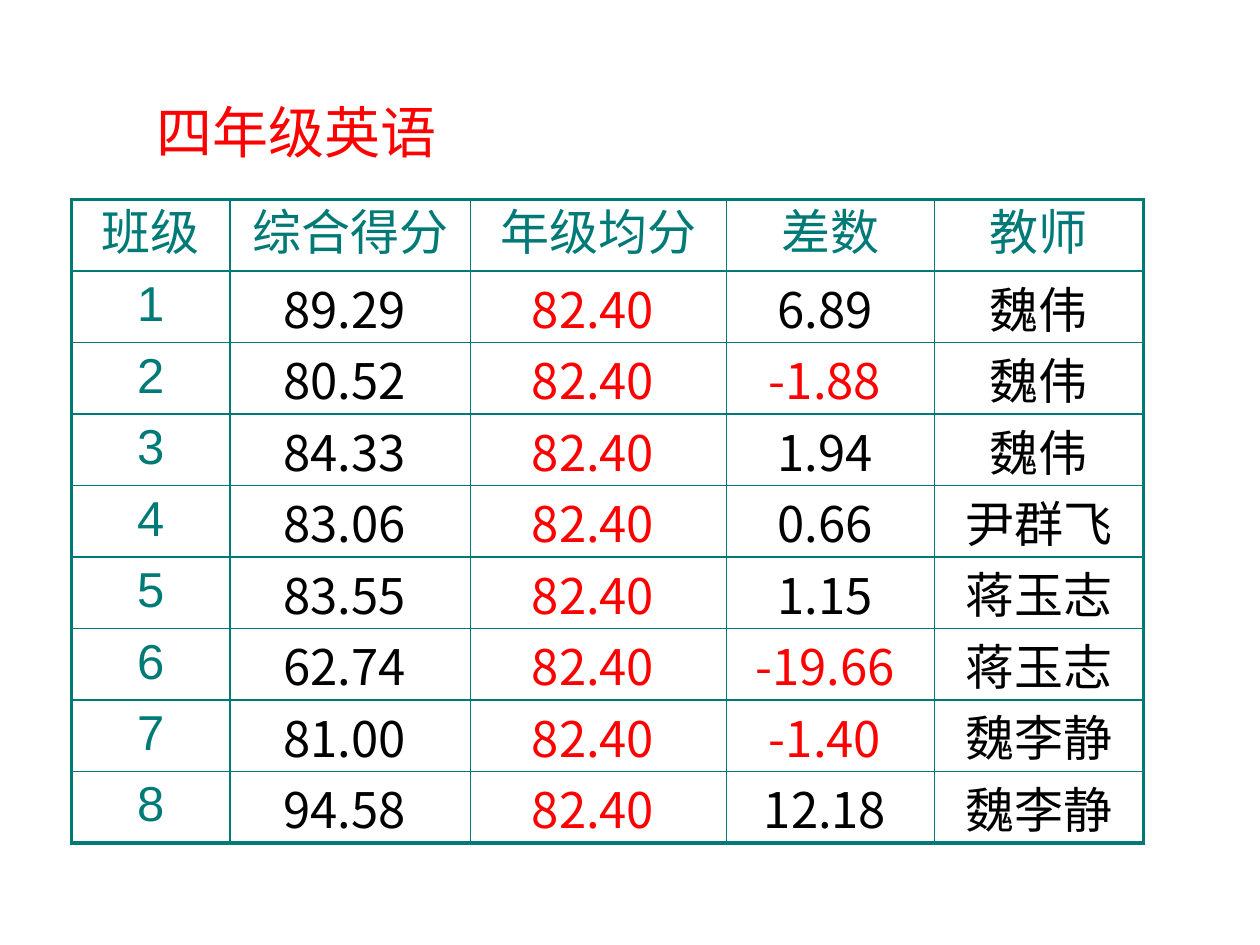
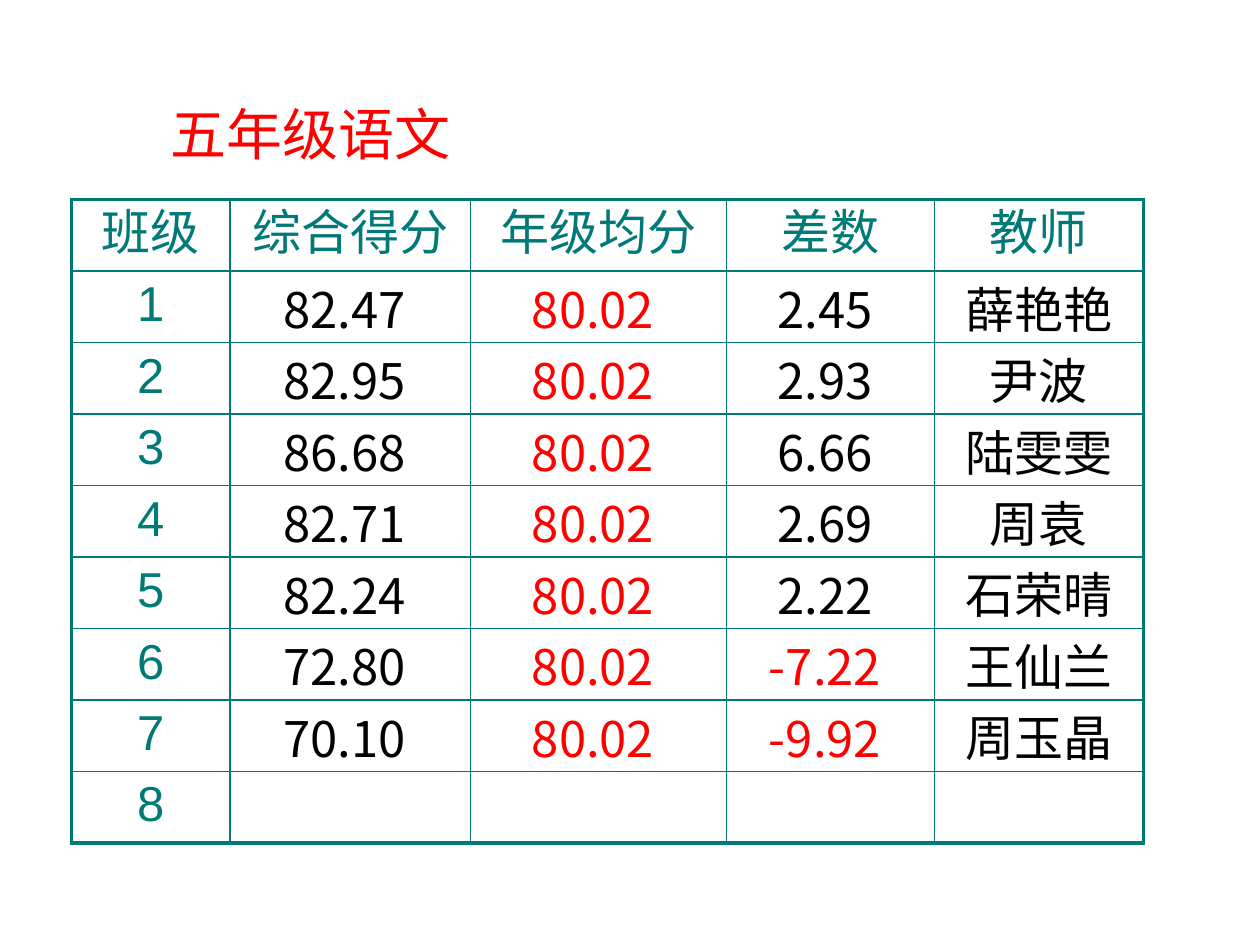
from typing import NamedTuple

from lxml import etree
from pptx import Presentation
from pptx import util as u
from pptx.dml.color import RGBColor
from pptx.enum import text
from pptx.oxml.ns import qn

PX = u.Inches(1) // 120
COLORS = {"teal": "007A77", "red": "FF0000", "black": "000000"}
LATIN, CJK = "Arial", "Noto Sans CJK SC"
HEADERS = ("班级", "综合得分", "年级均分", "差数", "教师")
COL_WIDTHS = (151, 229, 244, 198, 199)
TABLE_LEFT, TABLE_TOP, ROW_HEIGHT = 68, 190, 68
CLASS_COUNT = 8
THIN, THICK = u.Pt(1), u.Pt(2.25)
TOP, MIDDLE, BOTTOM = (text.MSO_ANCHOR.TOP, text.MSO_ANCHOR.MIDDLE,
                       text.MSO_ANCHOR.BOTTOM)


class Box(NamedTuple):
    left: int
    top: int
    width: int
    height: int


class Result(NamedTuple):
    score: str
    difference: str
    teacher: str


class Report(NamedTuple):
    title: str
    title_box: Box
    average: str
    results: tuple[Result, ...]


class Style(NamedTuple):
    font: str
    color: str
    anchor: text.MSO_ANCHOR = TOP
    inset: bool = True


LABEL = Style(LATIN, "teal")
NUMBER = Style(CJK, "black", BOTTOM, False)
RED_NUMBER = NUMBER._replace(color="red")
TEACHER = Style(CJK, "black", MIDDLE, False)

REPORTS = (
    Report("四年级英语", Box(60, 87, 445, 76), "82.40", (
        Result("89.29", "6.89", "魏伟"),
        Result("80.52", "-1.88", "魏伟"),
        Result("84.33", "1.94", "魏伟"),
        Result("83.06", "0.66", "尹群飞"),
        Result("83.55", "1.15", "蒋玉志"),
        Result("62.74", "-19.66", "蒋玉志"),
        Result("81.00", "-1.40", "魏李静"),
        Result("94.58", "12.18", "魏李静"),
    )),
    Report("五年级语文", Box(77, 89, 438, 76), "80.02", (
        Result("82.47", "2.45", "薛艳艳"),
        Result("82.95", "2.93", "尹波"),
        Result("86.68", "6.66", "陆雯雯"),
        Result("82.71", "2.69", "周袁"),
        Result("82.24", "2.22", "石荣晴"),
        Result("72.80", "-7.22", "王仙兰"),
        Result("70.10", "-9.92", "周玉晶"),
    )),
)


def write(tf, words: str, size: int, font: str, color: str) -> None:
    p = tf.paragraphs[0]
    p.alignment = text.PP_ALIGN.CENTER
    r = p.add_run()
    r.text = words
    r.font.size = u.Pt(size)
    r.font.name = font
    r.font.color.rgb = RGBColor.from_string(COLORS[color])
    latin = r._r.get_or_add_rPr().find(qn("a:latin"))
    latin.addnext(etree.Element(qn("a:ea"), typeface=font))


def set_borders(cell, row: int, col: int) -> None:
    """Thick lines on the table's outer edge, thin ones inside."""
    outer = {
        "a:lnL": col == 0,
        "a:lnR": col == len(HEADERS) - 1,
        "a:lnT": row == 0,
        "a:lnB": row == CLASS_COUNT,
    }
    tc_pr = cell._tc.get_or_add_tcPr()
    for i, (tag, is_outer) in enumerate(outer.items()):
        ln = etree.Element(qn(tag), w=str(THICK if is_outer else THIN))
        fill = etree.SubElement(ln, qn("a:solidFill"))
        etree.SubElement(fill, qn("a:srgbClr"), val=COLORS["teal"])
        tc_pr.insert(i, ln)


def fill_cell(cell, words: str, style: Style) -> None:
    cell.vertical_anchor = style.anchor
    if not style.inset:
        cell.margin_left = cell.margin_right = 0
        cell.margin_top = cell.margin_bottom = 0
    write(cell.text_frame, words, 28, style.font, style.color)


def table_rows(report: Report) -> list[list[tuple[str, Style]]]:
    rows = [[(header, LABEL) for header in HEADERS]]
    for i in range(CLASS_COUNT):
        row = [(str(i + 1), LABEL)]
        if i < len(report.results):
            res = report.results[i]
            below = res.difference.startswith("-")
            row += [
                (f"{res.score} ", NUMBER),
                (f"{report.average} ", RED_NUMBER),
                (f"{res.difference} ", RED_NUMBER if below else NUMBER),
                (res.teacher, TEACHER),
            ]
        rows.append(row)
    return rows


def add_score_table(s, report: Report) -> None:
    rows = table_rows(report)
    box = Box(TABLE_LEFT, TABLE_TOP, sum(COL_WIDTHS), ROW_HEIGHT * len(rows))
    table = s.shapes.add_table(len(rows), len(HEADERS),
                               *(v * PX for v in box)).table
    table.first_row = table.horz_banding = False
    for column, width in zip(table.columns, COL_WIDTHS):
        column.width = width * PX
    for i, row in enumerate(rows):
        table.rows[i].height = ROW_HEIGHT * PX
        for j in range(len(HEADERS)):
            cell = table.cell(i, j)
            cell.fill.background()
            set_borders(cell, i, j)
            if j < len(row):
                fill_cell(cell, *row[j])


def add_title(s, report: Report) -> None:
    tf = s.shapes.add_textbox(*(v * PX for v in report.title_box)).text_frame
    tf.word_wrap = True
    tf.auto_size = text.MSO_AUTO_SIZE.SHAPE_TO_FIT_TEXT
    write(tf, report.title, 32, LATIN, "red")


def main() -> None:
    prs = Presentation()
    prs.slide_width, prs.slide_height = 1200 * PX, 900 * PX
    for report in REPORTS:
        s = prs.slides.add_slide(prs.slide_layouts[6])
        add_title(s, report)
        add_score_table(s, report)
    prs.save("out.pptx")


if __name__ == "__main__":
    main()
